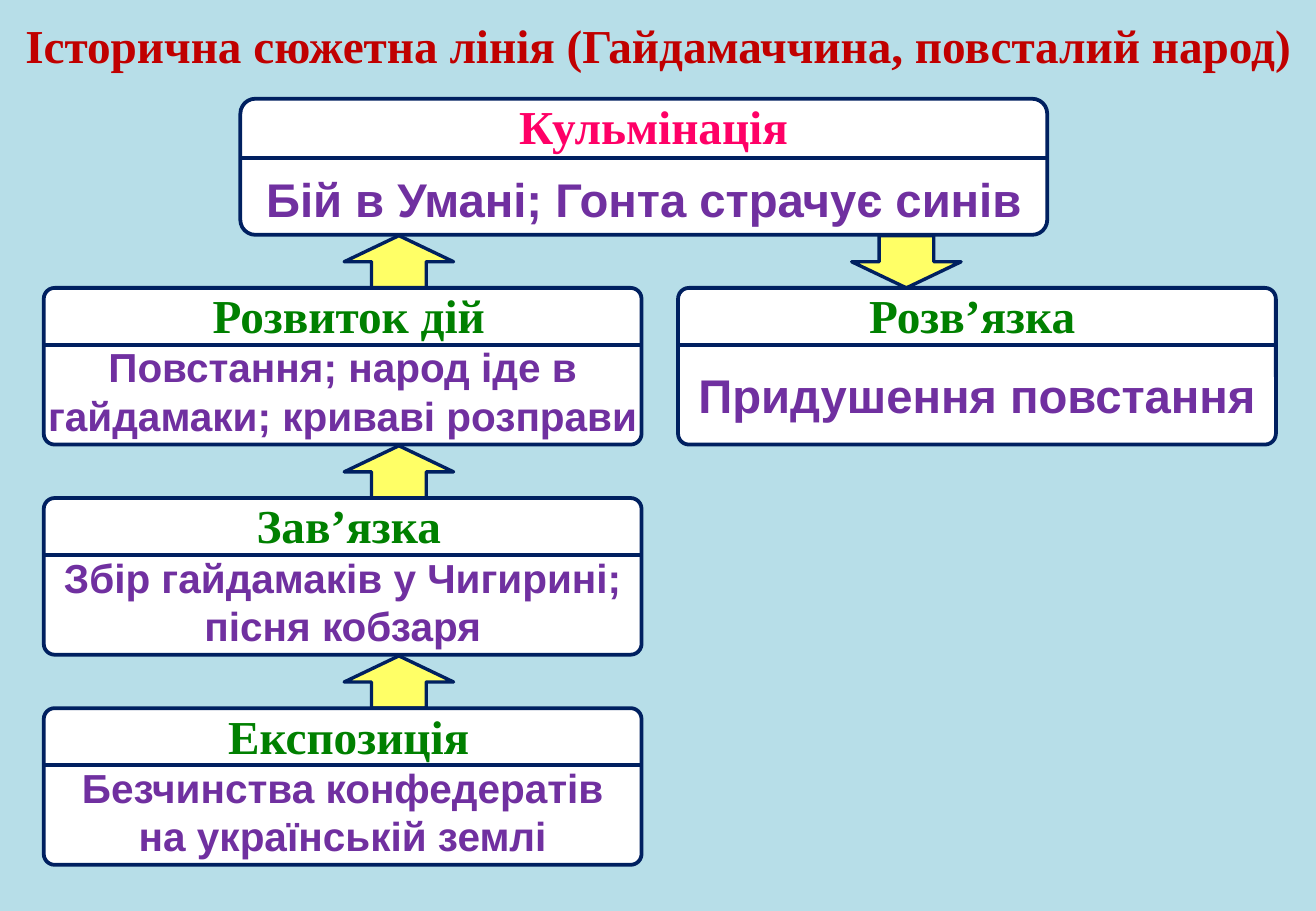
from dataclasses import dataclass

from lxml import etree
from pptx import Presentation
from pptx import util as u
from pptx.dml.color import RGBColor
from pptx.enum import shapes, text
from pptx.oxml import ns

SKY = RGBColor(0xB7, 0xDE, 0xE8)
NAVY = RGBColor(0x00, 0x20, 0x60)
WHITE = RGBColor(0xFF, 0xFF, 0xFF)
YELLOW = RGBColor(0xFF, 0xFF, 0x66)
RED = RGBColor(0xC0, 0x00, 0x00)
PINK = RGBColor(0xFF, 0x00, 0x66)
GREEN = RGBColor(0x00, 0x80, 0x00)
PURPLE = RGBColor(0x70, 0x30, 0xA0)

SERIF, SANS = "Times New Roman", "Arial"

# Grid in inches: two columns, with rows counted from the first full row
SLIDE_WIDTH, SLIDE_HEIGHT = 10.83, 7.5
GRID_LEFT, GRID_TOP = 0.36, 2.37
COLUMN_STEP, ROW_STEP = 5.22, 1.73
ARROW_WIDTH, ARROW_HEIGHT = 0.9, 0.43
LINE_HEIGHT = 0.57


@dataclass(frozen=True)
class Card:
    heading: str
    body: str
    column: float
    row: float
    heading_color: RGBColor = GREEN
    width: float = 4.92
    height: float = 1.29
    radius: float = 0.07
    divider: float = 0.47
    heading_shift: float = 0.05
    body_size: int = 24
    body_offset: float = 0.4
    body_overhang: float = 0


@dataclass(frozen=True)
class Arrow:
    column: float
    row: int
    rotation: int = 0


CARDS = [
    Card("Кульмінація", "Бій в Умані; Гонта страчує синів", 0.31, -0.9, PINK,
         width=6.64, height=1.12, radius=0.11, divider=0.49,
         heading_shift=0.08, body_size=28, body_offset=0.54),
    Card("Розвиток дій", "Повстання; народ іде в гайдамаки; криваві розправи",
         0, 0, body_overhang=0.09),
    Card("Зав’язка", "Збір гайдамаків у Чигирині; пісня кобзаря", 0, 1),
    Card("Експозиція", "Безчинства конфедератів на українській землі", 0, 2),
    Card("Розв’язка", "Придушення повстання", 1, 0,
         heading_shift=-0.04, body_size=28, body_offset=0.6),
]
ARROWS = [Arrow(0.56, 0), Arrow(0.56, 1), Arrow(0.56, 2), Arrow(1.36, 0, 180)]


def column_x(column: float) -> float:
    return GRID_LEFT + column * COLUMN_STEP


def row_y(row: float) -> float:
    return GRID_TOP + row * ROW_STEP


def write(shape, words: str, size: int, font_name: str, color: RGBColor) -> None:
    frame = shape.text_frame
    frame.word_wrap = True
    frame.auto_size = text.MSO_AUTO_SIZE.NONE
    frame.vertical_anchor = text.MSO_ANCHOR.TOP
    paragraph = frame.paragraphs[0]
    paragraph.text = words
    paragraph.alignment = text.PP_ALIGN.CENTER
    paragraph.line_spacing = 1.0
    paragraph.space_before = u.Pt(0)
    font = paragraph.font
    font.size, font.name, font.bold = u.Pt(size), font_name, True
    font.color.rgb = color


def add_panel(slide, kind, left: float, top: float, width: float, height: float,
              fill: RGBColor, line_width: float):
    shape = slide.shapes.add_shape(
        kind, u.Inches(left), u.Inches(top), u.Inches(width), u.Inches(height))
    shape.shadow.inherit = False
    shape.fill.solid()
    shape.fill.fore_color.rgb = fill
    shape.line.color.rgb = NAVY
    shape.line.width = u.Pt(line_width)
    return shape


def add_label(slide, left: float, top: float, width: float, height: float,
              words: str, size: int, font_name: str, color: RGBColor) -> None:
    box = slide.shapes.add_textbox(
        u.Inches(left), u.Inches(top), u.Inches(width), u.Inches(height))
    write(box, words, size, font_name, color)


def add_divider(slide, left: float, right: float, y: float) -> None:
    connector = slide.shapes.add_connector(
        shapes.MSO_CONNECTOR.STRAIGHT,
        u.Inches(left), u.Inches(y), u.Inches(right), u.Inches(y))
    connector.line.color.rgb = NAVY
    connector.line.width = u.Pt(2.25)
    etree.SubElement(connector._element.spPr, ns.qn("a:effectLst"))


def add_arrow(slide, arrow: Arrow) -> None:
    shape = add_panel(
        slide, shapes.MSO_SHAPE.UP_ARROW,
        column_x(arrow.column) - ARROW_WIDTH / 2, row_y(arrow.row) - ARROW_HEIGHT,
        ARROW_WIDTH, ARROW_HEIGHT, YELLOW, 2)
    shape.rotation = arrow.rotation


def add_card(slide, card: Card) -> None:
    left, top = column_x(card.column), row_y(card.row)
    panel = add_panel(slide, shapes.MSO_SHAPE.ROUNDED_RECTANGLE,
                      left, top, card.width, card.height, WHITE, 2.25)
    panel.adjustments[0] = card.radius
    add_divider(slide, left, left + card.width, top + card.divider)
    add_label(slide, left + card.heading_shift, top - 0.06, card.width, LINE_HEIGHT,
              card.heading, 28, SERIF, card.heading_color)
    add_label(slide, left - card.body_overhang, top + card.body_offset,
              card.width + 2 * card.body_overhang,
              LINE_HEIGHT if card.body_size == 28 else 0.91,
              card.body, card.body_size, SANS, PURPLE)


def main() -> None:
    presentation = Presentation()
    presentation.slide_width = u.Inches(SLIDE_WIDTH)
    presentation.slide_height = u.Inches(SLIDE_HEIGHT)
    slide = presentation.slides.add_slide(presentation.slide_layouts[5])
    slide.background.fill.solid()
    slide.background.fill.fore_color.rgb = SKY

    # Title
    title = slide.shapes.title
    title.left, title.top = u.Inches(0), u.Inches(0.08)
    title.width, title.height = u.Inches(SLIDE_WIDTH), u.Inches(LINE_HEIGHT)
    write(title, "Історична сюжетна лінія (Гайдамаччина, повсталий народ)",
          28, SERIF, RED)

    # Arrows lie behind the plot cards
    for arrow in ARROWS:
        add_arrow(slide, arrow)
    for card in CARDS:
        add_card(slide, card)

    presentation.save("out.pptx")


if __name__ == "__main__":
    main()
